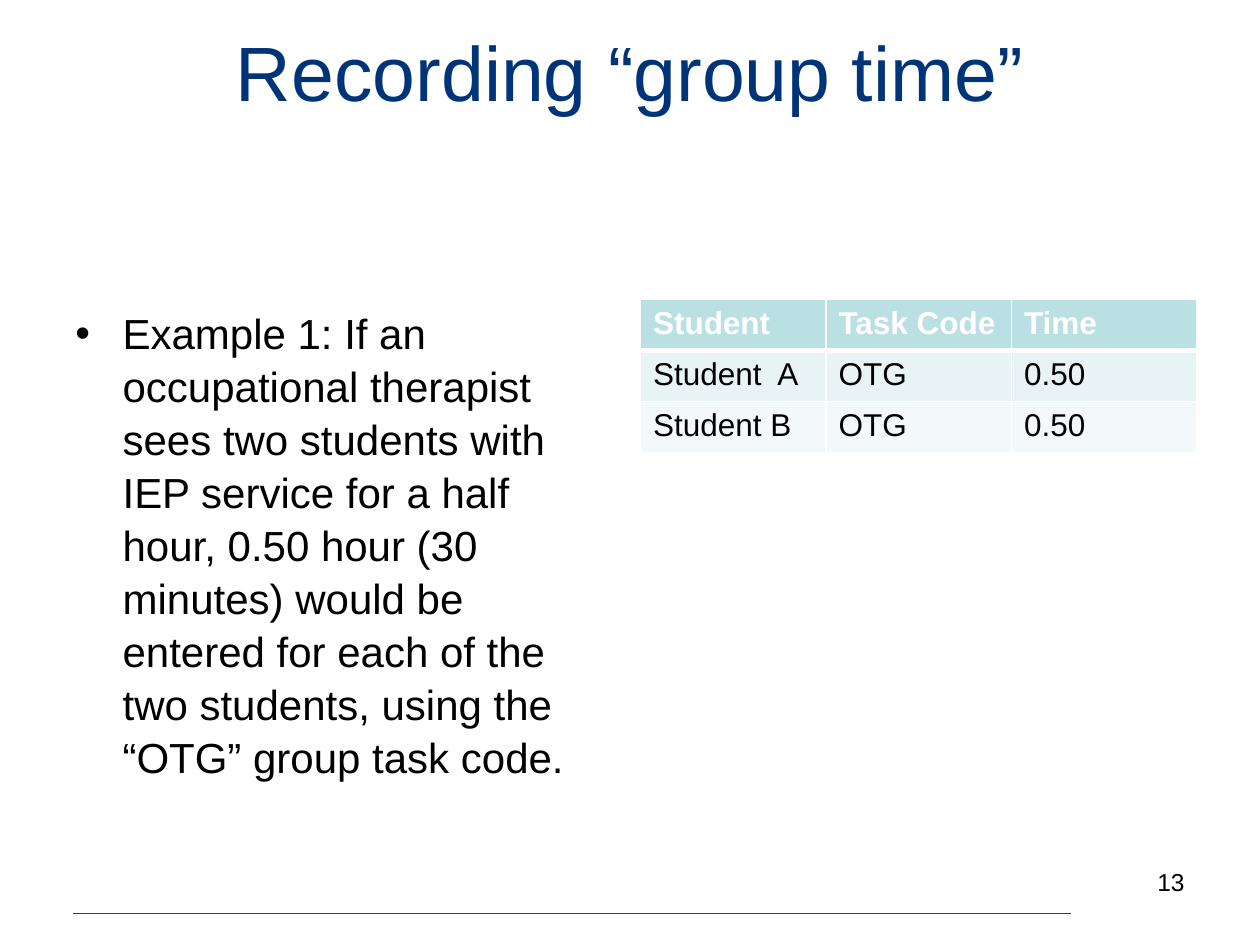
from dataclasses import dataclass
from typing import Any

from lxml.etree import SubElement as Sub
from pptx import Presentation
from pptx.dml.color import RGBColor as Rgb
from pptx.enum.shapes import MSO_CONNECTOR as Link
from pptx.enum.text import MSO_ANCHOR as Anchor, PP_ALIGN as Align
from pptx.oxml.ns import qn
from pptx.util import Pt


@dataclass(frozen=True)
class Theme:
    face: str = "Arial"
    navy: str = "003479"
    black: str = "000000"
    white: str = "FFFFFF"
    red: str = "CC0000"
    head: str = "BBE0E3"
    bands: tuple = ("E7F3F4", "F3F9FA")
    title: int = 44
    body: int = 24
    cell: int = 18
    page: int = 14


@dataclass(frozen=True)
class Box:
    x: float
    y: float
    w: float
    h: float

    def spots(self) -> tuple:
        return Pt(self.x), Pt(self.y), Pt(self.w), Pt(self.h)


@dataclass(frozen=True)
class Row:
    texts: tuple
    fill: str
    ink: str
    bold: bool = False
    top: float = 1
    base: float = 1


THEME = Theme()
ROWS = (
    Row(("Student", "Task Code", "Time"), THEME.head, THEME.white, True, base=3),
    Row(("Student  A", "OTG", "0.50"), THEME.bands[0], THEME.black, top=3),
    Row(("Student B", "OTG", "0.50"), THEME.bands[1], THEME.black),
)


def style(para: Any, size: float, ink: str, bold: bool = False) -> None:
    font = para.font
    font.name, font.size, font.bold = THEME.face, Pt(size), bold
    font.color.rgb = Rgb.from_string(ink)


def add_text(slide: Any, box: Box, text: str) -> Any:
    frame = slide.shapes.add_textbox(*box.spots()).text_frame
    frame.word_wrap = True
    frame.text = text
    return frame.paragraphs[0]


def add_bullet(para: Any, indent: float) -> None:
    props = para._p.get_or_add_pPr()
    props.set("marL", str(Pt(indent)))
    props.set("indent", str(-Pt(indent)))
    Sub(props, qn("a:buFont"), typeface=THEME.face)
    Sub(props, qn("a:buChar"), char="•")


def add_edge(cell: Any, side: str, width: float) -> None:
    edge = Sub(cell._tc.get_or_add_tcPr(), qn(f"a:ln{side}"), w=str(Pt(width)))
    Sub(Sub(edge, qn("a:solidFill")), qn("a:srgbClr"), val=THEME.white)


def add_grid(slide: Any, box: Box, rows: tuple) -> None:
    cols = len(rows[0].texts)
    table = slide.shapes.add_table(len(rows), cols, *box.spots()).table
    for r, row in enumerate(rows):
        for c, text in enumerate(row.texts):
            cell = table.cell(r, c)
            cell.text = text
            style(cell.text_frame.paragraphs[0], THEME.cell, row.ink, row.bold)
            for side, width in zip("LRTB", (1, 1, row.top, row.base)):
                add_edge(cell, side, width)
            cell.fill.solid()
            cell.fill.fore_color.rgb = Rgb.from_string(row.fill)


def add_rule(slide: Any, x: float, y: float, end: float) -> None:
    rule = slide.shapes.add_connector(Link.STRAIGHT, Pt(x), Pt(y), Pt(end), Pt(y))
    rule.line.color.rgb = Rgb.from_string(THEME.red)
    rule.line.width = Pt(0.75)
    Sub(rule._element.spPr, qn("a:effectLst"))


def main() -> None:
    deck = Presentation()
    deck.slide_width, deck.slide_height = Pt(720), Pt(540)
    slide = deck.slides.add_slide(deck.slide_layouts[5])

    # Footer rule
    add_rule(slide, 42, 522, 612)

    # Title, with a line break that lifts it in its box
    title = slide.shapes.title
    title.left, title.top, title.width, title.height = Box(36, 21.6, 648, 90).spots()
    frame = title.text_frame
    frame.text = "Recording “group time”\v"
    frame.vertical_anchor = Anchor.MIDDLE
    frame.paragraphs[0].alignment = Align.CENTER
    style(frame.paragraphs[0], THEME.title, THEME.navy)

    # Example
    note = add_text(
        slide, Box(36, 171, 318, 311),
        "Example 1: If an occupational therapist sees two students with IEP "
        "service for a half hour, 0.50 hour (30 minutes) would be entered for "
        "each of the two students, using the “OTG” group task code.")
    add_bullet(note, 27)
    note.line_spacing = 1.05
    style(note, THEME.body, THEME.black)

    # Time record
    add_grid(slide, Box(366, 171, 318, 87.6), ROWS)

    # Page number
    page = add_text(slide, Box(516, 492, 168, 37.5), "13")
    page.alignment = Align.RIGHT
    style(page, THEME.page, THEME.black)

    deck.save("out.pptx")


if __name__ == "__main__":
    main()
